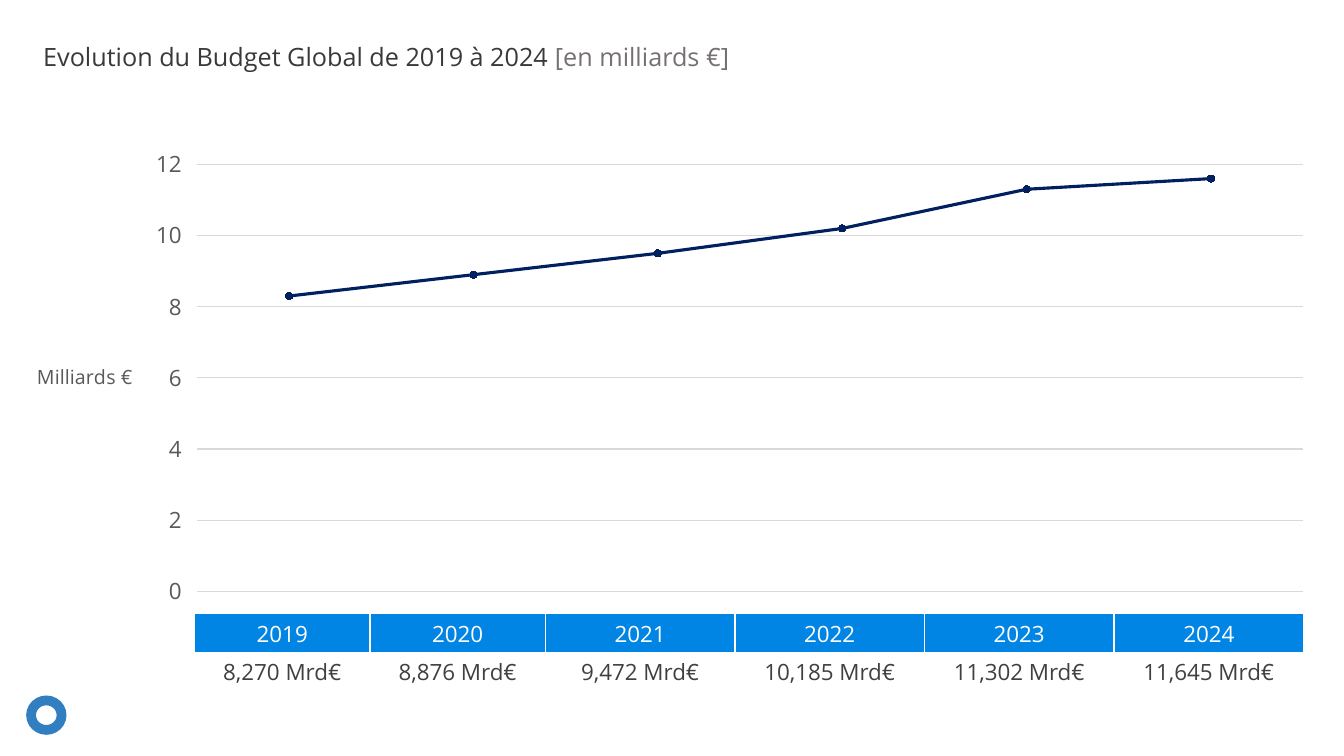
from dataclasses import dataclass

from lxml import etree
from pptx import Presentation
from pptx import util as u
from pptx.chart.data import CategoryChartData
from pptx.dml.color import RGBColor
from pptx.enum import chart as ch
from pptx.enum import shapes, text
from pptx.oxml.ns import qn

BUDGETS = {
    "2019": ("8,270", 8.3),
    "2020": ("8,876", 8.9),
    "2021": ("9,472", 9.5),
    "2022": ("10,185", 10.2),
    "2023": ("11,302", 11.3),
    "2024": ("11,645", 11.6),
}
TITLE = "Evolution du Budget Global de 2019 à 2024 "
TITLE_UNIT = "[en milliards €]"
AXIS_TITLE = "Milliards €"
CELL_UNIT = " Mrd€"

WIDTH, HEIGHT = 13.33, 7.5
MARGIN = 0.33
TITLE_BOX = (MARGIN, 0.36, 11.73, 0.4)
CHART_BOX = (MARGIN, 1.41, 12.6, 4.61)
TABLE_LEFT, TABLE_TOP, ROW_HEIGHT = 1.93, 6.09, 0.38
COLUMN_WIDTHS = [1.74] * 2 + [1.88] * 4
EMBLEM_BOX = (0.26, 6.9, 0.4, 0.39)
PLOT_SHARES = {"x": 0.129, "y": 0.048, "w": 0.871, "h": 0.919}
AXIS_TITLE_SHARES = {"x": 0, "y": 0.464}


@dataclass(frozen=True)
class Theme:
    font: str = "Open Sans"
    title: str = "3B3838"
    muted: str = "767171"
    axis: str = "595959"
    grid: str = "D9D9D9"
    series: str = "002060"
    header: str = "0085E5"
    body: str = "404040"
    white: str = "FFFFFF"
    emblem: str = "317EC1"
    title_size: int = 18
    label_size: int = 16
    axis_title_size: int = 14


THEME = Theme()


def color(value):
    return RGBColor.from_string(value)


def inches(box):
    return [u.Inches(length) for length in box]


def style(font, size, value):
    font.name = THEME.font
    font.size = u.Pt(size)
    font.bold = False
    font.color.rgb = color(value)


def add_run(paragraph, words, size, value):
    run = paragraph.add_run()
    run.text = words
    style(run.font, size, value)


def add_title(slide):
    box = slide.shapes.add_textbox(*inches(TITLE_BOX))
    frame = box.text_frame
    frame.word_wrap = True
    frame.auto_size = text.MSO_AUTO_SIZE.SHAPE_TO_FIT_TEXT
    paragraph = frame.paragraphs[0]
    add_run(paragraph, TITLE, THEME.title_size, THEME.title)
    add_run(paragraph, TITLE_UNIT, THEME.title_size, THEME.muted)


def place(parent, position, shares, inner=False):
    for old in parent.findall(qn("c:layout")):
        parent.remove(old)
    layout = etree.Element(qn("c:layout"))
    manual = etree.SubElement(layout, qn("c:manualLayout"))
    if inner:
        etree.SubElement(manual, qn("c:layoutTarget")).set("val", "inner")
    for axis in "xy":
        etree.SubElement(manual, qn(f"c:{axis}Mode")).set("val", "edge")
    for name, share in shares.items():
        etree.SubElement(manual, qn(f"c:{name}")).set("val", str(share))
    parent.insert(position, layout)


def add_budget_chart(slide):
    data = CategoryChartData()
    data.categories = [str(number) for number in range(1, len(BUDGETS) + 1)]
    data.add_series("Series 1", [billions for _, billions in BUDGETS.values()])
    chart = slide.shapes.add_chart(
        ch.XL_CHART_TYPE.LINE_MARKERS, *inches(CHART_BOX), data
    ).chart
    chart.has_legend = False
    chart.has_title = False
    style(chart.font, THEME.label_size, THEME.axis)
    chart.category_axis.visible = False

    axis = chart.value_axis
    axis.minimum_scale, axis.maximum_scale, axis.major_unit = 0, 12, 2
    axis.major_tick_mark = ch.XL_TICK_MARK.OUTSIDE
    axis.format.line.fill.background()
    axis.major_gridlines.format.line.color.rgb = color(THEME.grid)
    axis.major_gridlines.format.line.width = u.Pt(0.75)
    axis.tick_labels.number_format = "0_ ;[Red]\\-0\\ "
    axis.tick_labels.number_format_is_linked = False
    style(axis.tick_labels.font, THEME.label_size, THEME.axis)

    frame = axis.axis_title.text_frame
    add_run(frame.paragraphs[0], AXIS_TITLE, THEME.axis_title_size, THEME.axis)
    body = frame._txBody.find(qn("a:bodyPr"))
    body.set("rot", "0")
    body.set("vert", "horz")
    place(axis._element.find(qn("c:title")), 1, AXIS_TITLE_SHARES)
    place(chart._chartSpace.chart.plotArea, 0, PLOT_SHARES, inner=True)

    plot = chart.plots[0]
    plot.vary_by_categories = False
    series = plot.series[0]
    series.smooth = False
    series.format.line.color.rgb = color(THEME.series)
    series.format.line.width = u.Pt(2.25)
    series.marker.style = ch.XL_MARKER_STYLE.CIRCLE
    series.marker.size = 5
    series.marker.format.fill.solid()
    series.marker.format.fill.fore_color.rgb = color(THEME.series)
    series.marker.format.line.color.rgb = color(THEME.series)


def add_borders(cell):
    properties = cell._tc.get_or_add_tcPr()
    for position, side in enumerate("LRTB"):
        line = etree.Element(qn(f"a:ln{side}"), w=str(u.Pt(1)))
        fill = etree.SubElement(line, qn("a:solidFill"))
        etree.SubElement(fill, qn("a:srgbClr")).set("val", THEME.white)
        properties.insert(position, line)


def add_budget_table(slide):
    rows = [list(BUDGETS), [label + CELL_UNIT for label, _ in BUDGETS.values()]]
    box = (TABLE_LEFT, TABLE_TOP, sum(COLUMN_WIDTHS), ROW_HEIGHT * len(rows))
    table = slide.shapes.add_table(len(rows), len(BUDGETS), *inches(box)).table
    table.horz_banding = False
    for column, width in zip(table.columns, COLUMN_WIDTHS):
        column.width = u.Inches(width)
    for row_index, row in enumerate(rows):
        table.rows[row_index].height = u.Inches(ROW_HEIGHT)
        for column_index, words in enumerate(row):
            cell = table.cell(row_index, column_index)
            cell.margin_left = cell.margin_top = cell.margin_right = u.Inches(0.01)
            cell.margin_bottom = 0
            cell.vertical_anchor = text.MSO_ANCHOR.MIDDLE
            if row_index == 0:
                cell.fill.solid()
                cell.fill.fore_color.rgb = color(THEME.header)
            else:
                cell.fill.background()
            add_borders(cell)
            paragraph = cell.text_frame.paragraphs[0]
            paragraph.alignment = text.PP_ALIGN.CENTER
            value = THEME.body if row_index else THEME.white
            add_run(paragraph, words, THEME.label_size, value)


def add_emblem(slide):
    shape = slide.shapes.add_shape(shapes.MSO_SHAPE.DONUT, *inches(EMBLEM_BOX))
    shape.shadow.inherit = False
    shape.fill.solid()
    shape.fill.fore_color.rgb = color(THEME.emblem)
    shape.line.fill.background()


def main():
    presentation = Presentation()
    presentation.slide_width, presentation.slide_height = inches((WIDTH, HEIGHT))
    slide = presentation.slides.add_slide(presentation.slide_layouts[6])
    add_emblem(slide)
    add_budget_table(slide)
    add_budget_chart(slide)
    add_title(slide)
    presentation.save("out.pptx")


if __name__ == "__main__":
    main()
